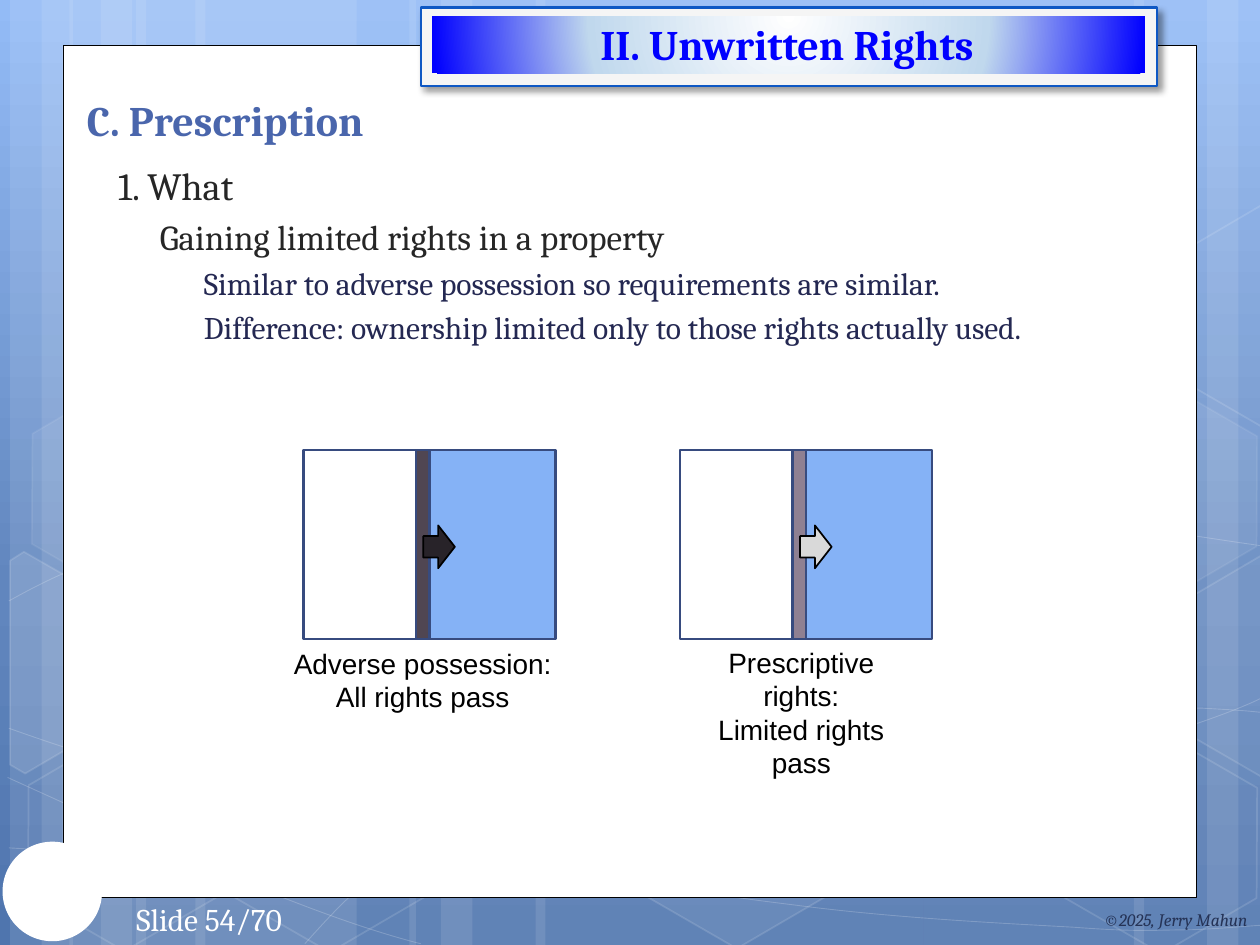
import dataclasses

import lxml.etree
import pptx
import pptx.dml.color
import pptx.enum.shapes
import pptx.enum.text
import pptx.oxml
import pptx.oxml.ns
import pptx.util

Inches, Pt = pptx.util.Inches, pptx.util.Pt
SHAPE = pptx.enum.shapes.MSO_SHAPE
ALIGN = pptx.enum.text.PP_ALIGN
ANCHOR = pptx.enum.text.MSO_ANCHOR
qn = pptx.oxml.ns.qn


@dataclasses.dataclass(frozen=True)
class Theme:
    serif: str = "Cambria"
    sans: str = "Arial"
    white: str = "FFFFFF"
    black: str = "000000"
    banner_fill: str = "F5F5F5"
    banner_line: str = "0E58C4"
    banner_text: str = "0000FF"
    heading: str = "4A66AC"
    body: str = "262626"
    detail: str = "242852"
    copyright: str = "253356"
    parcel_line: str = "374B7F"
    parcel_blue: str = "85B2F6"
    backdrop: tuple = ((0, "93BBF6"), (62, "6186BE"), (100, "4F75AE"))
    banner_glow: tuple = ((0, "FFFFFF"), (56, "C0D8ED"), (100, "0000FF"))
    heading_size: int = 24
    level_sizes: tuple = (22, 20, 18)
    caption_size: int = 16
    small_size: int = 10


THEME = Theme()
RADIAL = '<a:path path="circle"><a:fillToRect l="50000" t="-80000" r="50000" b="180000"/></a:path>'
VERTICAL = '<a:lin ang="5400000" scaled="0"/>'


def rgb(color):
    return pptx.dml.color.RGBColor.from_string(color)


def set_alpha(parent, percent):
    """Make every solid colour below parent partly transparent."""
    for color in parent.iter(qn("a:srgbClr")):
        lxml.etree.SubElement(color, qn("a:alpha"), val=str(percent * 1000))


def set_gradient(parent, stops, direction):
    """Replace the solid fill of parent by a gradient of (percent, colour) stops."""
    marks = "".join(f'<a:gs pos="{p * 1000}"><a:srgbClr val="{c}"/></a:gs>' for p, c in stops)
    gradient = pptx.oxml.parse_xml(
        f'<a:gradFill {pptx.oxml.ns.nsdecls("a")} rotWithShape="1">'
        f"<a:gsLst>{marks}</a:gsLst>{direction}</a:gradFill>")
    parent.replace(parent.find(qn("a:solidFill")), gradient)


def write(frame, paragraphs, font=THEME.serif, size=18, color=THEME.black, bold=False,
          italic=False, align=ALIGN.LEFT, anchor=ANCHOR.TOP, wrap=True):
    """Fill a text frame; a paragraph is a string or a (string, overrides) pair."""
    frame.word_wrap = wrap
    frame.vertical_anchor = anchor
    frame.auto_size = pptx.enum.text.MSO_AUTO_SIZE.NONE
    for index, entry in enumerate(paragraphs):
        text, own = (entry, {}) if isinstance(entry, str) else entry
        paragraph = frame.add_paragraph() if index else frame.paragraphs[0]
        paragraph.alignment = align
        own_size = own.get("size", size)
        if "indent" in own:
            paragraph._p.get_or_add_pPr().set("marL", str(Inches(own["indent"])))
            if index:
                paragraph.space_before = Pt(own_size * 0.2)
        run = paragraph.add_run()
        run.text = text
        run.font.name, run.font.size = font, Pt(own_size)
        run.font.bold, run.font.italic = bold, italic
        run.font.color.rgb = rgb(own.get("color", color))


class SlideBuilder:
    def __init__(self, slide, theme):
        self.slide, self.theme = slide, theme

    def backdrop(self):
        self.slide.background.fill.solid()
        set_gradient(self.slide._element.find(".//" + qn("p:bgPr")), self.theme.backdrop, VERTICAL)

    def style(self, shape, fill, line, width, fill_alpha=100, line_alpha=100):
        shape.shadow.inherit = False
        if fill:
            shape.fill.solid()
            shape.fill.fore_color.rgb = rgb(fill)
            if fill_alpha < 100:
                set_alpha(shape._element.spPr.find(qn("a:solidFill")), fill_alpha)
        else:
            shape.fill.background()
        if line:
            shape.line.color.rgb = rgb(line)
            shape.line.width = Pt(width)
            if line_alpha < 100:
                set_alpha(shape.line._get_or_add_ln(), line_alpha)
        else:
            shape.line.fill.background()
        return shape

    def shape(self, kind, box, fill=None, line=None, width=1, adjust=(), rotation=0, **alphas):
        shape = self.slide.shapes.add_shape(kind, *map(Inches, box))
        for index, value in enumerate(adjust):
            shape.adjustments[index] = value
        shape.rotation = rotation
        return self.style(shape, fill, line, width, **alphas)

    def outline(self, points, closed, fill=None, width=1, **alphas):
        corners = [(Inches(x), Inches(y)) for x, y in points]
        builder = self.slide.shapes.build_freeform(*corners[0], scale=1.0)
        builder.add_line_segments(corners[1:], close=closed)
        return self.style(builder.convert_to_shape(), fill, self.theme.white, width, **alphas)

    def curve(self, points, **format):
        """Draw a chain of cubic curves: a start, then three points per curve."""
        anchors = points[::3]
        shape = self.outline(anchors, False, **format)
        left, top = (min(axis) for axis in zip(*anchors))
        segments = list(shape._element.spPr.iter(qn("a:lnTo")))
        for index, segment in enumerate(segments):
            cubic = lxml.etree.Element(qn("a:cubicBezTo"))
            for x, y in points[3 * index + 1:3 * index + 4]:
                lxml.etree.SubElement(cubic, qn("a:pt"), x=str(Inches(x - left)),
                                      y=str(Inches(y - top)))
            segment.getparent().replace(segment, cubic)

    def text(self, box, paragraphs, **format):
        write(self.slide.shapes.add_textbox(*map(Inches, box)).text_frame, paragraphs, **format)

    def title(self, box, text, **format):
        title = self.slide.shapes.title
        self.slide.shapes._spTree.append(title._element)
        title.left, title.top, title.width, title.height = map(Inches, box)
        write(title.text_frame, [text], **format)

    def parcel(self, left, strip, arrow):
        """Two adjoining lots, the disputed strip between them and its arrow."""
        for offset, width, fill in ((0, 1, self.theme.white), (1, 1, self.theme.parcel_blue),
                                    (0.89, 0.11, strip)):
            self.shape(SHAPE.RECTANGLE, (left + offset, 3.57, width, 1.5), fill,
                       self.theme.parcel_line, 1.25)
        self.shape(SHAPE.RIGHT_ARROW, (left + 0.95, 4.17, 0.25, 0.34), arrow,
                   self.theme.black, 1, adjust=(0.5, 0.53))


STRIPES = ((1.08, 1.75), (0.08, 0.5), (0.33, 0.83), (1.55, 1.75), (0.55, 0.5), (0.8, 0.83),
           (7.33, 1.75), (9.58, 0.5), (9, 0.83), (4.25, 3.08), (3.25, 0.5), (3.5, 0.83))
WAVES = (
    ((0.07, 6.73), (0.61, 6.76), (1.15, 6.79), (1.9, 6.78), (2.65, 6.77), (3.58, 6.75),
     (4.58, 6.65), (5.58, 6.55), (7, 6.36), (7.92, 6.17), (8.83, 5.98), (9.77, 5.68),
     (10.07, 5.51)),
    ((0.07, 4.77), (0.36, 4.61), (0.65, 4.46), (1.21, 4.31), (1.78, 4.16), (2.59, 3.94),
     (3.47, 3.87), (4.36, 3.8), (5.44, 3.79), (6.54, 3.87), (7.64, 3.95), (9.47, 4.26),
     (10.07, 4.34)),
    ((0.06, 6.17), (1.27, 6.72), (2.47, 7.27), (3.34, 7.49)),
    ((0.07, 5.78), (0.38, 5.89), (0.7, 6), (1.28, 6.16), (1.86, 6.31), (2.73, 6.56),
     (3.57, 6.73), (4.4, 6.9), (5.45, 7.08), (6.28, 7.18), (7.11, 7.29), (8, 7.33),
     (8.53, 7.36), (9.05, 7.4), (9.19, 7.38), (9.45, 7.38), (9.71, 7.37), (9.89, 7.35),
     (10.07, 7.34)),
    ((2.42, 7.49), (2.6, 7.29), (2.78, 7.09), (3.02, 6.91), (3.26, 6.73), (3.6, 6.53),
     (3.88, 6.39), (4.16, 6.25), (4.33, 6.19), (4.7, 6.09), (5.06, 5.99), (5.73, 5.85),
     (6.08, 5.78), (6.44, 5.71), (6.49, 5.71), (6.8, 5.69), (7.11, 5.66), (7.6, 5.63),
     (7.94, 5.62), (8.29, 5.61), (8.86, 5.62), (8.86, 5.62), (9.1, 5.62), (9.3, 5.62),
     (9.53, 5.62), (9.71, 5.63), (9.88, 5.64), (9.97, 5.65), (10.06, 5.66), (10.03, 5.65),
     (10.06, 5.66)),
)
# left, top, fill opacity (0 for none), line opacity
HEXAGONS = ((3.34, 0.36, 4, 8), (4.97, 5.89, 6, 12), (0.11, 5.91, 0, 12), (0.14, 3.12, 7, 8),
            (1.74, 5.92, 0, 12), (7.53, 4.53, 10, 12), (8.34, 5.93, 0, 12), (8.34, 3.14, 7, 8))
CUT_HEXAGONS = (
    (((0.08, 4.45), (0.19, 4.38), (0.96, 4.82), (0.95, 5.7), (0.2, 6.14), (0.08, 6.07)), 10),
    (((9.26, 4.85), (10.01, 4.41), (10.09, 4.46), (10.09, 6.13), (10.02, 6.17), (9.26, 5.73)), 4),
    (((9.26, 2.07), (10.01, 1.63), (10.1, 1.68), (10.09, 3.35), (10.02, 3.39), (9.26, 2.95)), 0),
)


def draw_backdrop(page):
    white = page.theme.white
    page.backdrop()
    for left, width in STRIPES:
        page.shape(SHAPE.RECTANGLE, (left, 0, width, 7.5), white, fill_alpha=10)
    for wave in WAVES:
        page.curve(wave, width=0.5, line_alpha=20)
    for left, top, opacity, edge in HEXAGONS:
        page.shape(SHAPE.HEXAGON, (left, top, 1.75, 1.52), white if opacity else None, white,
                   adjust=(0.285,), rotation=30, fill_alpha=opacity, line_alpha=edge)
    for corners, opacity in CUT_HEXAGONS:
        page.outline(corners, True, white if opacity else None, fill_alpha=opacity, line_alpha=12)


def draw_frame(page):
    theme = page.theme
    page.shape(SHAPE.RECTANGLE, (0.5, 0.36, 9, 6.76), theme.white, theme.black, 0.5)
    banner = page.shape(SHAPE.RECTANGLE, (3.34, 0.06, 5.84, 0.62), theme.banner_fill,
                        theme.banner_line, 1.25)
    shadow = lxml.etree.SubElement(
        banner._element.spPr.find(qn("a:effectLst")), qn("a:outerShdw"),
        blurRad=str(Pt(4)), dist=str(Pt(3)), dir="2700000", algn="tl", rotWithShape="0")
    lxml.etree.SubElement(shadow, qn("a:srgbClr"), val=theme.black)
    set_alpha(shadow, 40)
    glow = page.shape(SHAPE.RECTANGLE, (3.43, 0.13, 5.66, 0.45), theme.white)
    set_gradient(glow._element.spPr, theme.banner_glow, RADIAL)
    page.shape(SHAPE.OVAL, (0.02, 6.68, 0.79, 0.79), theme.white)
    page.text((0.74, 7.09, 1.84, 0.4), ["Slide 54/70"], color=theme.white, align=ALIGN.CENTER)
    page.text((4.4, 0.1, 3.69, 0.5), ["II. Unwritten Rights"], size=theme.heading_size, bold=True,
              color=theme.banner_text, align=ALIGN.CENTER, wrap=False)
    page.text((8.17, 7.1, 1.83, 0.4), ["©2025, Jerry Mahun"], size=theme.small_size, italic=True,
              color=theme.copyright, align=ALIGN.RIGHT, anchor=ANCHOR.MIDDLE)


def draw_content(page):
    theme = page.theme
    page.title((0.59, 0.73, 7.68, 0.47), "C. Prescription", size=theme.heading_size, bold=True,
               color=theme.heading, anchor=ANCHOR.BOTTOM)
    topic, meaning, detail = (
        dict(indent=indent, size=size, color=color) for indent, size, color in
        zip((0.07, 0.4, 0.75), theme.level_sizes, (theme.body, theme.body, theme.detail)))
    page.text((0.77, 1.24, 8.46, 5.32), [
        ("1. What", topic),
        ("Gaining limited rights in a property", meaning),
        ("Similar to adverse possession so requirements are similar.", detail),
        ("Difference: ownership limited only to those rights actually used.", detail)])
    page.parcel(2.41, strip="504652", arrow="282329")
    page.parcel(5.4, strip="8F8092", arrow="D9D9D9")
    caption = dict(font=theme.sans, size=theme.caption_size, align=ALIGN.CENTER)
    page.text((2.22, 5.08, 2.27, 0.64), ["Adverse possession:", "All rights pass"],
              wrap=False, **caption)
    page.text((5.56, 5.07, 1.6, 1.15), ["Prescriptive rights:", "Limited rights pass"], **caption)


def main():
    deck = pptx.Presentation()
    deck.slide_width, deck.slide_height = Inches(10), Inches(7.5)
    page = SlideBuilder(deck.slides.add_slide(deck.slide_layouts[5]), THEME)
    draw_backdrop(page)
    draw_frame(page)
    draw_content(page)
    deck.save("out.pptx")


if __name__ == "__main__":
    main()
